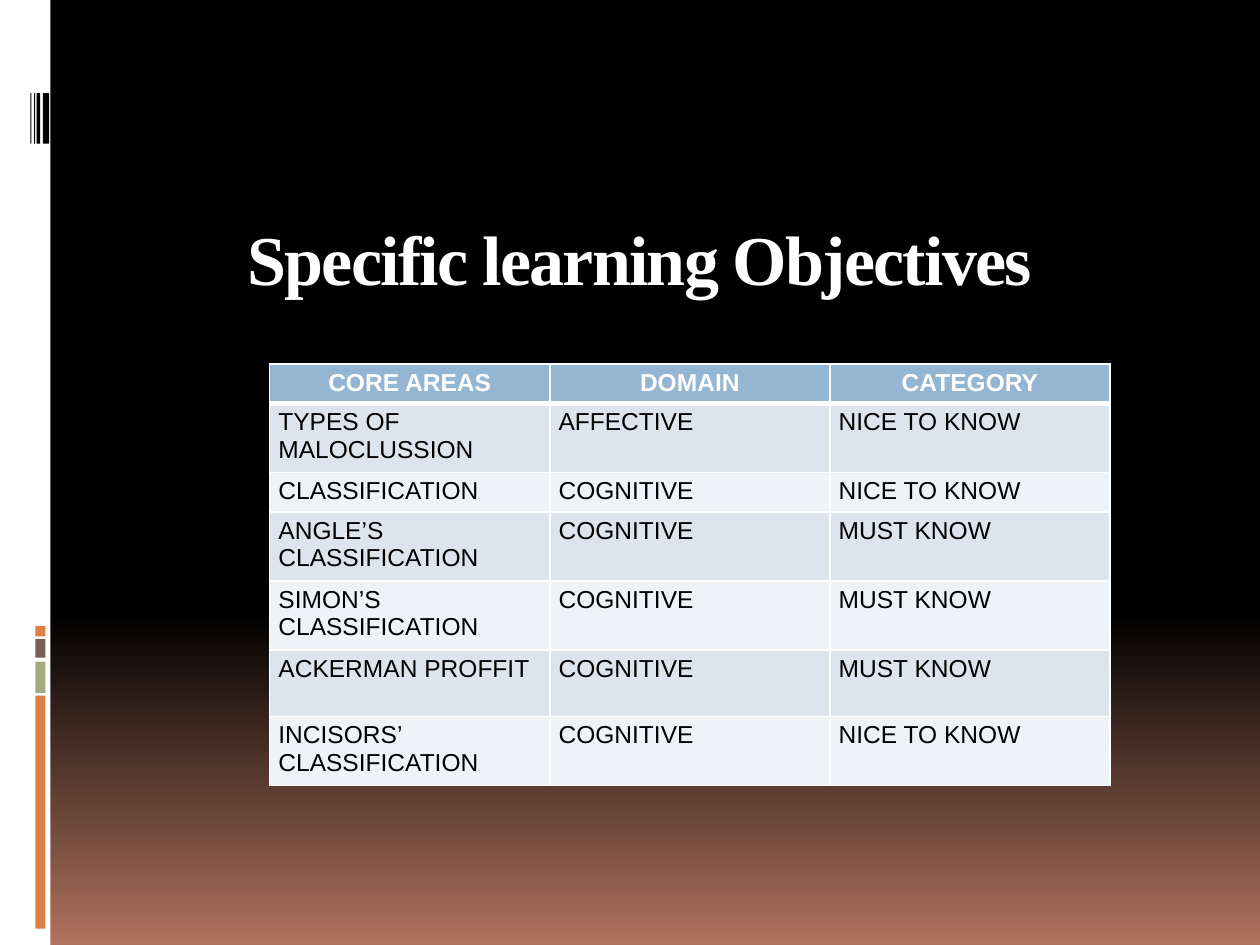
from copy import deepcopy
from dataclasses import dataclass

from lxml.etree import SubElement
from pptx import Presentation
from pptx.dml.color import RGBColor
from pptx.enum.shapes import MSO_SHAPE
from pptx.enum.text import MSO_ANCHOR, PP_ALIGN
from pptx.oxml.ns import qn
from pptx.util import Inches, Pt


@dataclass(frozen=True)
class Theme:
    white: str = "FFFFFF"
    black: str = "000000"
    glow: str = "B0735D"
    orange: str = "DD8047"
    green: str = "A5AB81"
    brown: str = "775F55"
    header: str = "94B6D2"
    bands: tuple = ("DCE5EE", "EEF3F7")
    title_font: str = "Times New Roman"
    table_font: str = "Arial"
    title_size: int = 40
    table_size: int = 14
    border: int = 1
    header_rule: int = 3


THEME = Theme()
WIDTH, HEIGHT = 10, 7.5

TITLE = "Specific learning Objectives "
HEADER = ("CORE AREAS", "DOMAIN", "CATEGORY")
OBJECTIVES = [
    ("TYPES OF MALOCLUSSION", "AFFECTIVE", "NICE TO KNOW"),
    ("CLASSIFICATION", "COGNITIVE", "NICE TO KNOW"),
    ("ANGLE’S CLASSIFICATION", "COGNITIVE", "MUST KNOW"),
    ("SIMON’S CLASSIFICATION", "COGNITIVE", "MUST KNOW"),
    ("ACKERMAN PROFFIT", "COGNITIVE", "MUST KNOW"),
    ("INCISORS’ CLASSIFICATION", "COGNITIVE", "NICE TO KNOW"),
]
ROW_HEIGHTS = (0.3, 0.51, 0.3, 0.53, 0.53, 0.53, 0.53)
TABLE_LEFT, TABLE_TOP, TABLE_WIDTH = 2.14, 2.89, 6.67

# Side strip: (top, height, colour) for blocks, (left, width) for stripes
BLOCK_LEFT, BLOCK_WIDTH = 0.28, 0.08
BLOCKS = [
    (5.52, 1.85, THEME.orange),
    (5.25, 0.25, THEME.green),
    (5.07, 0.15, THEME.brown),
    (4.97, 0.08, THEME.orange),
]
STRIPE_TOP, STRIPE_HEIGHT = 0.74, 0.4
STRIPES = [(0.34, 0.05), (0.29, 0.03), (0.27, 0.01), (0.24, 0.01)]


def color(value):
    return RGBColor.from_string(value)


def paint_background(slide):
    """Black down to 65 % of the height, then fading to the glow colour."""
    fill = slide.background.fill
    fill.gradient()
    fill.gradient_angle = 270
    first, last = fill.gradient_stops
    first.color.rgb, first.position = color(THEME.black), 0
    last.color.rgb, last.position = color(THEME.glow), 1
    stops = next(slide.element.iter(qn("a:gsLst")))
    middle = deepcopy(stops[0])
    middle.set("pos", "65000")
    stops.insert(1, middle)


def add_bar(slide, left, top, width, height, fill):
    shape = slide.shapes.add_shape(
        MSO_SHAPE.RECTANGLE, *map(Inches, (left, top, width, height)))
    shape.shadow.inherit = False
    shape.fill.solid()
    shape.fill.fore_color.rgb = color(fill)
    shape.line.fill.background()


def add_side_strip(slide):
    add_bar(slide, 0, 0, 0.4, HEIGHT, THEME.white)
    for top, height, fill in BLOCKS:
        add_bar(slide, BLOCK_LEFT, top, BLOCK_WIDTH, height, fill)
    for left, width in STRIPES:
        add_bar(slide, left, STRIPE_TOP, width, STRIPE_HEIGHT, THEME.black)


def format_paragraph(paragraph, font, size, ink, bold, centred):
    paragraph.alignment = PP_ALIGN.CENTER if centred else PP_ALIGN.LEFT
    for run in paragraph.runs:
        run.font.name, run.font.size, run.font.bold = font, Pt(size), bold
        run.font.color.rgb = color(ink)


def add_title(slide):
    box = slide.shapes.add_textbox(*map(Inches, (1.34, 1.59, 7.6, 0.9)))
    frame = box.text_frame
    frame.word_wrap = True
    frame.vertical_anchor = MSO_ANCHOR.MIDDLE
    frame.text = TITLE
    paragraph = frame.paragraphs[0]
    format_paragraph(paragraph, THEME.title_font, THEME.title_size,
                     THEME.white, True, True)
    paragraph.runs[0].font._element.set("spc", "-100")


def add_borders(cell, top, bottom):
    properties = cell._tc.get_or_add_tcPr()
    widths = {"L": THEME.border, "R": THEME.border, "T": top, "B": bottom}
    for side, width in widths.items():
        line = SubElement(properties, qn(f"a:ln{side}"), w=str(Pt(width)))
        fill = SubElement(line, qn("a:solidFill"))
        SubElement(fill, qn("a:srgbClr"), val=THEME.white)


def add_objectives_table(slide):
    rows = [HEADER, *OBJECTIVES]
    table = slide.shapes.add_table(
        len(rows), len(HEADER), Inches(TABLE_LEFT), Inches(TABLE_TOP),
        Inches(TABLE_WIDTH), Inches(sum(ROW_HEIGHTS))).table
    for row, height in zip(table.rows, ROW_HEIGHTS):
        row.height = Inches(height)
    for r, texts in enumerate(rows):
        is_header = r == 0
        band = THEME.header if is_header else THEME.bands[(r - 1) % 2]
        ink = THEME.white if is_header else THEME.black
        top = THEME.header_rule if r == 1 else THEME.border
        bottom = THEME.header_rule if is_header else THEME.border
        for c, text in enumerate(texts):
            cell = table.cell(r, c)
            add_borders(cell, top, bottom)
            cell.fill.solid()
            cell.fill.fore_color.rgb = color(band)
            cell.margin_left = cell.margin_right = Inches(0.07)
            cell.margin_top = cell.margin_bottom = Inches(0.04)
            cell.text_frame.text = text
            format_paragraph(cell.text_frame.paragraphs[0], THEME.table_font,
                             THEME.table_size, ink, is_header, is_header)


def main():
    presentation = Presentation()
    presentation.slide_width = Inches(WIDTH)
    presentation.slide_height = Inches(HEIGHT)
    slide = presentation.slides.add_slide(presentation.slide_layouts[6])
    paint_background(slide)
    add_side_strip(slide)
    add_title(slide)
    add_objectives_table(slide)
    presentation.save("out.pptx")


if __name__ == "__main__":
    main()
